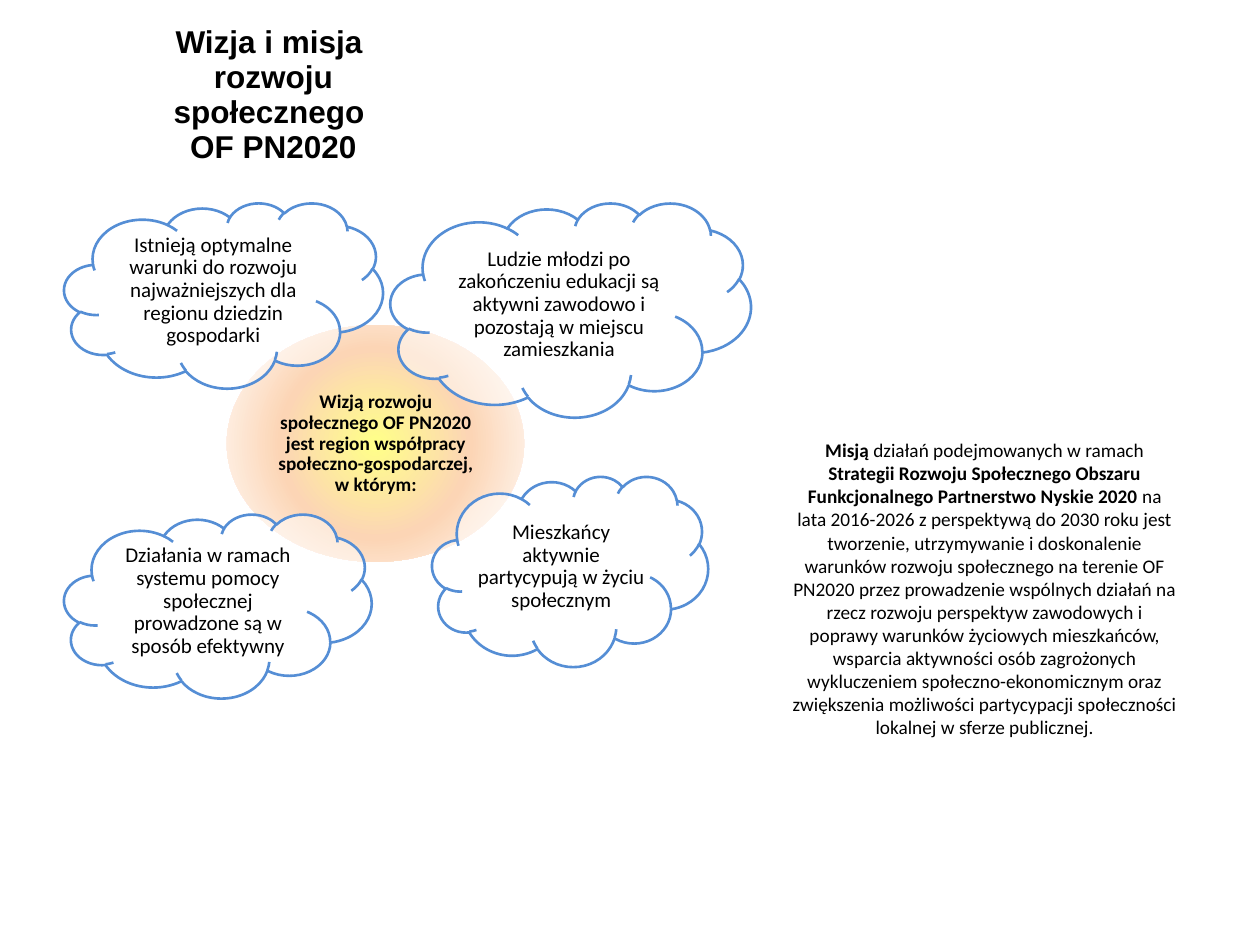
"""Build the slide on the vision and mission of social development."""
from dataclasses import dataclass

import pptx
import pptx.dml.color
import pptx.enum.shapes
import pptx.enum.text
import pptx.oxml
import pptx.oxml.ns
import pptx.util
from pptx.enum.shapes import MSO_SHAPE
from pptx.enum.text import MSO_ANCHOR, PP_ALIGN
from pptx.util import Inches


@dataclass
class Bubble:
    """A shape with its text in a box placed by shares of the shape's size."""
    text: str
    left: float
    top: float
    width: float
    height: float
    preset: MSO_SHAPE = MSO_SHAPE.CLOUD
    size: int = 12
    bold: bool = False
    inner: tuple[float, float, float, float] = (0.14, 0.15, 0.655, 0.65)


VISION = Bubble(
    "Wizją rozwoju społecznego OF PN2020 jest region współpracy "
    "społeczno-gospodarczej, w którym:",
    1.8, 2.58, 2.36, 1.88, MSO_SHAPE.OVAL, 11, True, (0.148, 0.148, 0.707, 0.707))

CLOUDS = [
    Bubble("Istnieją optymalne warunki do rozwoju najważniejszych dla regionu "
           "dziedzin gospodarki", 0.51, 1.61, 2.53, 1.47),
    Bubble("Ludzie młodzi po zakończeniu edukacji są aktywni zawodowo "
           "i pozostają w miejscu zamieszkania", 3.1, 1.61, 2.86, 1.7),
    Bubble("Mieszkańcy aktywnie partycypują w życiu społecznym",
           3.43, 3.78, 2.19, 1.51),
    Bubble("Działania w ramach systemu pomocy społecznej prowadzone są "
           "w sposób efektywny", 0.51, 4.08, 2.44, 1.46),
]

MISSION = [
    ("Misją", True),
    (" działań podejmowanych w ramach ", False),
    ("Strategii Rozwoju Społecznego Obszaru Funkcjonalnego Partnerstwo Nyskie 2020 ", True),
    ("na lata 2016-2026 z perspektywą do 2030 roku jest tworzenie, utrzymywanie "
     "i doskonalenie warunków rozwoju społecznego na terenie OF PN2020 przez "
     "prowadzenie wspólnych działań na rzecz rozwoju perspektyw zawodowych "
     "i poprawy warunków życiowych mieszkańców, wsparcia aktywności osób "
     "zagrożonych wykluczeniem społeczno-ekonomicznym oraz zwiększenia możliwości "
     "partycypacji społeczności lokalnej w sferze publicznej.", False),
]

GRADIENT = [(0, "FFFF89"), (50, "FCD5B5"), (100, "FFFFFF")]


def color(value: str) -> pptx.dml.color.RGBColor:
    """Turn a hex string into a colour."""
    return pptx.dml.color.RGBColor.from_string(value)


def add_text(paragraph, text: str, *, size: int, font: str = "Calibri",
             bold: bool = False, spacing: float = 1.0) -> None:
    """Add a run to a centred paragraph."""
    paragraph.alignment = PP_ALIGN.CENTER
    paragraph.line_spacing = spacing
    run = paragraph.add_run()
    run.text = text
    run.font.name = font
    run.font.size = pptx.util.Pt(size)
    run.font.bold = bold
    run.font.color.rgb = color("000000")


def set_frame(frame, margins: tuple[float, float, float, float],
              anchor: MSO_ANCHOR, wrap: bool = True) -> None:
    """Set the margins, anchor and wrapping of a text frame."""
    (frame.margin_left, frame.margin_top,
     frame.margin_right, frame.margin_bottom) = map(Inches, margins)
    frame.vertical_anchor = anchor
    frame.word_wrap = wrap
    frame.auto_size = pptx.enum.text.MSO_AUTO_SIZE.NONE


def add_shape(slide, preset: MSO_SHAPE, left: float, top: float,
              width: float, height: float):
    """Add a white preset shape with no line or shadow."""
    shape = slide.shapes.add_shape(preset, *map(Inches, (left, top, width, height)))
    shape.shadow.inherit = False
    shape.fill.solid()
    shape.fill.fore_color.rgb = color("FFFFFF")
    shape.line.fill.background()
    return shape


def set_radial_gradient(shape, stops: list[tuple[int, str]]) -> None:
    """Replace a solid fill by a gradient that spreads from the centre."""
    stop_xml = "".join(
        f'<a:gs pos="{position * 1000}"><a:srgbClr val="{value}"/></a:gs>'
        for position, value in stops)
    gradient = pptx.oxml.parse_xml(
        f'<a:gradFill {pptx.oxml.ns.nsdecls("a")} rotWithShape="1">'
        f'<a:gsLst>{stop_xml}</a:gsLst><a:path path="circle">'
        '<a:fillToRect l="50000" t="50000" r="50000" b="50000"/></a:path></a:gradFill>')
    properties = shape.element.spPr
    properties.replace(properties.find(pptx.oxml.ns.qn("a:solidFill")), gradient)


def set_cloud_style(shape) -> None:
    """Make the fill half transparent and outline the shape in blue."""
    fill_color = shape.element.spPr.find(
        f'{pptx.oxml.ns.qn("a:solidFill")}/{pptx.oxml.ns.qn("a:srgbClr")}')
    fill_color.append(pptx.oxml.parse_xml(
        f'<a:alpha {pptx.oxml.ns.nsdecls("a")} val="50000"/>'))
    shape.line.color.rgb = color("558ED5")
    shape.line.width = pptx.util.Pt(1.5)


def add_bubble(slide, bubble: Bubble):
    """Draw a bubble and its text box, and return the shape."""
    shape = add_shape(slide, bubble.preset, bubble.left, bubble.top,
                      bubble.width, bubble.height)
    left, top, width, height = bubble.inner
    box = slide.shapes.add_textbox(
        Inches(bubble.left + left * bubble.width),
        Inches(bubble.top + top * bubble.height),
        Inches(width * bubble.width), Inches(height * bubble.height))
    set_frame(box.text_frame, (0.02, 0.02, 0.02, 0.02), MSO_ANCHOR.MIDDLE)
    add_text(box.text_frame.paragraphs[0], bubble.text, size=bubble.size,
             bold=bubble.bold, spacing=0.9)
    return shape


def add_title(slide, lines: list[str]) -> None:
    """Place the title, one paragraph a line."""
    title = slide.shapes.title
    title.left, title.top, title.width, title.height = map(
        Inches, (0.91, 0.13, 2.52, 1.02))
    frame = title.text_frame
    set_frame(frame, (0.1, 0.07, 0.1, 0.05), MSO_ANCHOR.TOP, wrap=False)
    for index, line in enumerate(lines):
        paragraph = frame.add_paragraph() if index else frame.paragraphs[0]
        add_text(paragraph, line, size=18, font="Arial", bold=True, spacing=0.93)


def main() -> None:
    """Build and save the presentation."""
    presentation = pptx.Presentation()
    presentation.slide_width, presentation.slide_height = Inches(10), Inches(7.5)
    slide = presentation.slides.add_slide(presentation.slide_layouts[5])
    add_title(slide, ["Wizja i misja ", "rozwoju społecznego ", "OF PN2020"])
    set_radial_gradient(add_bubble(slide, VISION), GRADIENT)
    for cloud in CLOUDS:
        set_cloud_style(add_bubble(slide, cloud))
    mission = add_shape(slide, MSO_SHAPE.RECTANGLE, 6.19, 3.43, 3.25, 2.76)
    set_frame(mission.text_frame, (0.1, 0.05, 0.1, 0.05), MSO_ANCHOR.TOP)
    for text, bold in MISSION:
        add_text(mission.text_frame.paragraphs[0], text, size=11, bold=bold)
    presentation.save("out.pptx")


if __name__ == "__main__":
    main()
